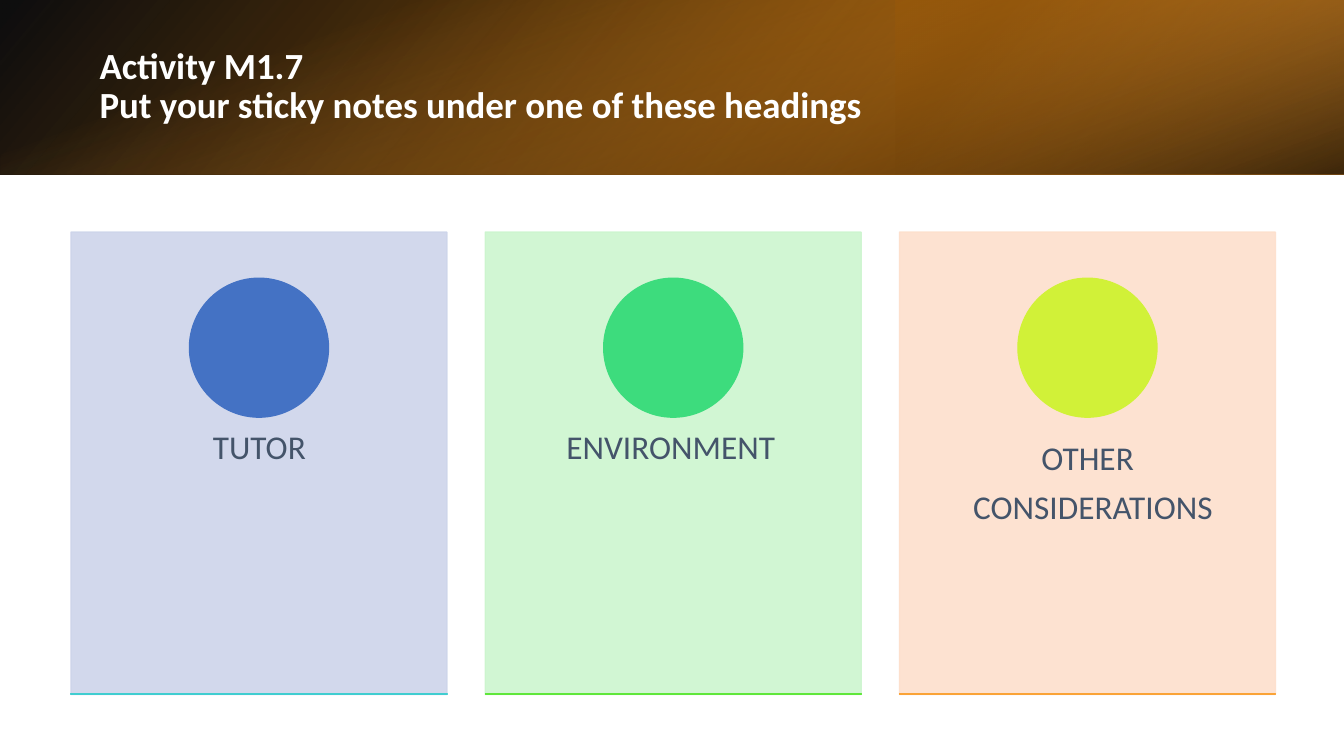
import lxml.etree
import pptx
import pptx.dml.color
import pptx.enum.shapes
import pptx.enum.text
import pptx.oxml.ns
import pptx.util

Inches = pptx.util.Inches
Pt = pptx.util.Pt
RGBColor = pptx.dml.color.RGBColor
MSO_SHAPE = pptx.enum.shapes.MSO_SHAPE
PP_ALIGN = pptx.enum.text.PP_ALIGN
MSO_ANCHOR = pptx.enum.text.MSO_ANCHOR
MSO_AUTO_SIZE = pptx.enum.text.MSO_AUTO_SIZE
qn = pptx.oxml.ns.qn

WHITE = RGBColor(0xFF, 0xFF, 0xFF)
BLACK = RGBColor(0x00, 0x00, 0x00)
SLATE = RGBColor(0x44, 0x54, 0x6A)
DARK_ORANGE = RGBColor(0xDF, 0x7E, 0x06)
BROWN = RGBColor(0x95, 0x54, 0x04)
AMBER = RGBColor(0xFA, 0xA3, 0x37)
PALE_BLUE = RGBColor(0xCD, 0xD4, 0xEA)
BLUE = RGBColor(0x44, 0x72, 0xC4)
TURQUOISE = RGBColor(0x40, 0xCD, 0xD0)
PALE_GREEN = RGBColor(0xCC, 0xF5, 0xCE)
GREEN = RGBColor(0x3D, 0xDC, 0x7D)
BRIGHT_GREEN = RGBColor(0x5F, 0xE7, 0x3A)
PEACH = RGBColor(0xFD, 0xDF, 0xCC)
LIME = RGBColor(0xD1, 0xF1, 0x38)

FONT = "Calibri"
SLIDE_WIDTH = 1050 / 72
SLIDE_HEIGHT = 591 / 72
HEADER_HEIGHT = 1.89
CARD_LEFT, CARD_TOP, CARD_WIDTH, CARD_HEIGHT = 0.77, 2.52, 4.08, 5.02
CARD_STEP = 4.495
CIRCLE_SIZE = 1.51


def add_filled_shape(kind, left, top, width, height, color):
    shape = slide.shapes.add_shape(
        kind, Inches(left), Inches(top), Inches(width), Inches(height))
    shape.shadow.inherit = False
    shape.fill.solid()
    shape.fill.fore_color.rgb = color
    shape.line.color.rgb = color
    shape.line.width = Pt(1)
    return shape


def apply_gradient(shape, stops, angle):
    """Replace the fill by a linear gradient; stops are (position, color, opacity) in percent."""
    solid_fill = shape._element.spPr.find(qn("a:solidFill"))
    gradient = lxml.etree.Element(qn("a:gradFill"))
    stop_list = lxml.etree.SubElement(gradient, qn("a:gsLst"))
    for position, color, opacity in stops:
        stop = lxml.etree.SubElement(stop_list, qn("a:gs"), pos=str(position * 1000))
        stop_color = lxml.etree.SubElement(stop, qn("a:srgbClr"), val=str(color))
        lxml.etree.SubElement(stop_color, qn("a:alpha"), val=str(opacity * 1000))
    lxml.etree.SubElement(gradient, qn("a:lin"), ang=str(angle * 60000), scaled="0")
    solid_fill.getparent().replace(solid_fill, gradient)


presentation = pptx.Presentation()
presentation.slide_width = Inches(SLIDE_WIDTH)
presentation.slide_height = Inches(SLIDE_HEIGHT)
slide = presentation.slides.add_slide(presentation.slide_layouts[5])

# Header band: left, top, width, height, rotation, flipped, gradient stops, angle
turned_offset = (SLIDE_WIDTH - HEADER_HEIGHT) / 2
header_layers = [
    (0, 0, SLIDE_WIDTH, HEADER_HEIGHT, 0, True,
     [(0, BLACK, 95), (100, DARK_ORANGE, 100)], 140),
    (SLIDE_WIDTH * 2 / 3, 0, SLIDE_WIDTH / 3, HEADER_HEIGHT, 180, True,
     [(0, BROWN, 67), (19, BROWN, 67), (100, AMBER, 78)], 320),
    (turned_offset, -turned_offset, HEADER_HEIGHT, SLIDE_WIDTH, 90, False,
     [(0, AMBER, 0), (23, AMBER, 0), (99, BLACK, 73), (100, BLACK, 73)], 340),
]
for left, top, width, height, rotation, flipped, stops, angle in header_layers:
    layer = add_filled_shape(MSO_SHAPE.RECTANGLE, left, top, width, height, BLACK)
    layer.line.fill.background()
    layer.rotation = rotation
    if flipped:
        layer._element.spPr.find(qn("a:xfrm")).set("flipH", "1")
    apply_gradient(layer, stops, angle)

# Title, brought in front of the header band
title = slide.shapes.title
slide.shapes._spTree.append(title._element)
title.left, title.top = Inches(1.03), Inches(0.42)
title.width, title.height = Inches(12.62), Inches(1.05)
title_frame = title.text_frame
title_frame.text = "Activity M1.7\vPut your sticky notes under one of these headings"
title_frame.word_wrap = True
title_frame.auto_size = MSO_AUTO_SIZE.NONE
title_frame.vertical_anchor = MSO_ANCHOR.MIDDLE
title_frame.margin_left = title_frame.margin_right = Inches(0.05)
title_frame.margin_top = title_frame.margin_bottom = Inches(0.05)
paragraph = title_frame.paragraphs[0]
paragraph.alignment = PP_ALIGN.LEFT
paragraph.line_spacing = 0.9
paragraph.font.name = FONT
paragraph.font.size = Pt(28.8)
paragraph.font.bold = True
paragraph.font.color.rgb = WHITE

# Cards: heading lines with their indents, heading height, card, circle and base line colors
cards = [
    ([("TUTOR", 1.22)], 1.08, PALE_BLUE, BLUE, TURQUOISE),
    ([("ENVIRONMENT", 0.56)], 1.08, PALE_GREEN, GREEN, BRIGHT_GREEN),
    ([("OTHER", 1.22), ("CONSIDERATIONS", 0.48)], 1.63, PEACH, LIME, AMBER),
]
for index, (lines, heading_height, card_color, circle_color, base_color) in enumerate(cards):
    left = CARD_LEFT + index * CARD_STEP
    card = add_filled_shape(
        MSO_SHAPE.RECTANGLE, left, CARD_TOP, CARD_WIDTH, CARD_HEIGHT, card_color)
    for color_element in card._element.spPr.iter(qn("a:srgbClr")):
        lxml.etree.SubElement(color_element, qn("a:alpha"), val="89000")

    heading = slide.shapes.add_textbox(
        Inches(left), Inches(4.48), Inches(CARD_WIDTH), Inches(heading_height))
    heading_frame = heading.text_frame
    heading_frame.word_wrap = True
    heading_frame.margin_left = heading_frame.margin_right = Inches(0.32)
    heading_frame.margin_top = heading_frame.margin_bottom = Inches(0.32)
    heading_frame.text = "\n".join(text for text, indent in lines)
    for line_number, (text, indent) in enumerate(lines):
        paragraph = heading_frame.paragraphs[line_number]
        paragraph._p.get_or_add_pPr().set("marL", str(Inches(indent)))
        paragraph.alignment = PP_ALIGN.LEFT
        paragraph.line_spacing = 0.9
        if line_number > 0:
            paragraph.space_before = Pt(10)
        paragraph.font.name = FONT
        paragraph.font.size = Pt(26)
        paragraph.font.color.rgb = SLATE

    add_filled_shape(
        MSO_SHAPE.OVAL, left + (CARD_WIDTH - CIRCLE_SIZE) / 2, 3.02,
        CIRCLE_SIZE, CIRCLE_SIZE, circle_color)
    add_filled_shape(MSO_SHAPE.RECTANGLE, left, 7.53, CARD_WIDTH, 0.01, base_color)

presentation.save("out.pptx")
